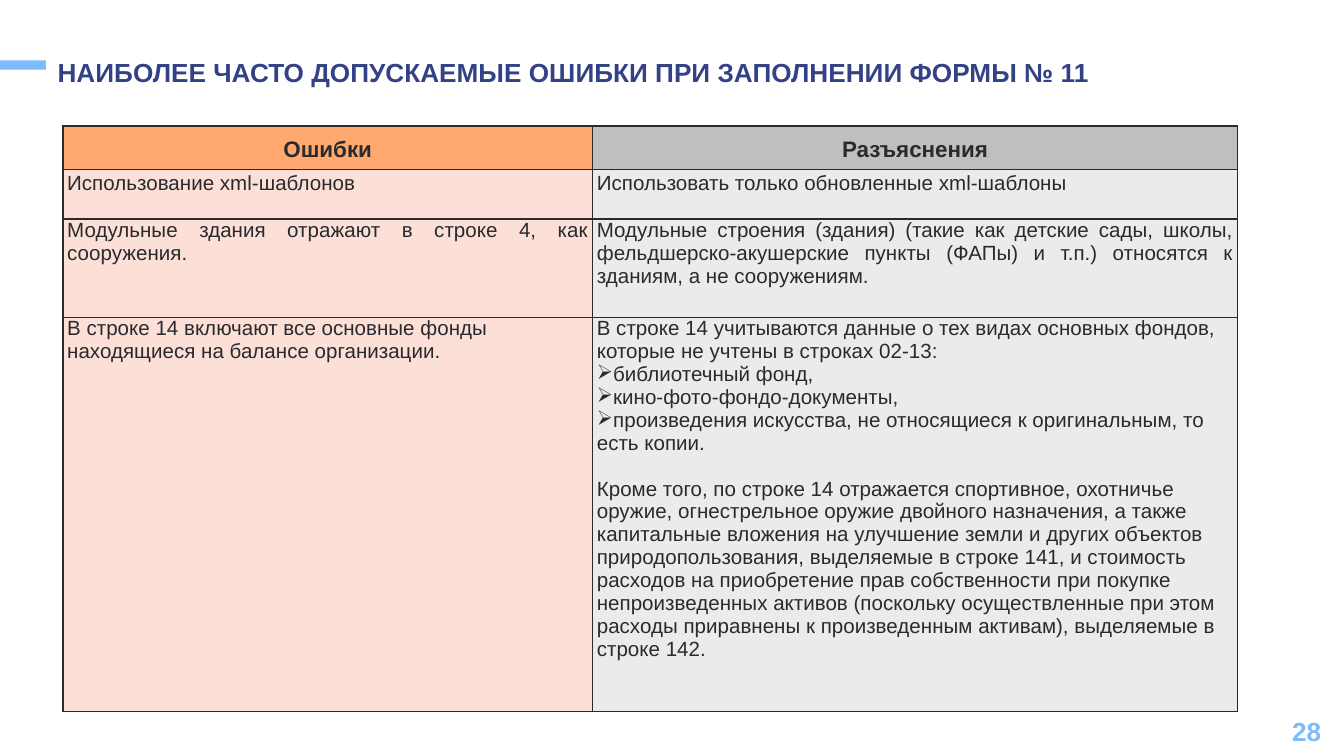
from dataclasses import dataclass

from lxml import etree
from pptx import Presentation
from pptx.dml.color import RGBColor
from pptx.enum.shapes import MSO_SHAPE
from pptx.enum.text import MSO_ANCHOR, PP_ALIGN
from pptx.oxml.ns import qn
from pptx.util import Cm, Pt

RECTANGLE = MSO_SHAPE.RECTANGLE
TOP, MIDDLE = MSO_ANCHOR.TOP, MSO_ANCHOR.MIDDLE
LEFT, CENTER, RIGHT, JUSTIFY = PP_ALIGN.LEFT, PP_ALIGN.CENTER, PP_ALIGN.RIGHT, PP_ALIGN.JUSTIFY


@dataclass(frozen=True)
class Theme:
    font: str = "Arial"
    accent: str = "7DBBFC"
    title: str = "334286"
    ink: str = "282A2E"
    header_fills: tuple = ("FFA970", "BFBFBF")
    body_fills: tuple = ("FCDFD7", "EBEBEB")
    title_size: float = 14
    header_size: float = 12
    body_size: float = 11
    border_width: float = 0.75


@dataclass(frozen=True)
class Paragraph:
    text: str
    bullet: str = ""
    space_before: float = 0


class SlideBuilder:
    def __init__(self, slide, theme):
        self.slide = slide
        self.theme = theme

    def style(self, paragraph, size, color, bold=False, align=LEFT):
        paragraph.alignment = align
        font = paragraph.font
        font.name, font.size, font.bold = self.theme.font, Pt(size), bold
        font.color.rgb = RGBColor.from_string(color)

    def bar(self, left, top, width, height):
        shape = self.slide.shapes.add_shape(RECTANGLE, Cm(left), Cm(top), Cm(width), Cm(height))
        shape.shadow.inherit = False
        shape.fill.solid()
        shape.fill.fore_color.rgb = RGBColor.from_string(self.theme.accent)
        shape.line.fill.background()

    def label(self, text, left, top, width, height, color, align=LEFT, margin=0):
        shape = self.slide.shapes.add_textbox(Cm(left), Cm(top), Cm(width), Cm(height))
        frame = shape.text_frame
        frame.word_wrap = True
        frame.vertical_anchor = MIDDLE
        frame.margin_left = frame.margin_right = Cm(margin)
        frame.margin_top = frame.margin_bottom = Cm(0.1)
        paragraph = frame.paragraphs[0]
        paragraph.text = text
        self.style(paragraph, self.theme.title_size, color, True, align)

    def border(self, cell):
        properties = cell._tc.get_or_add_tcPr()
        for side in ("a:lnL", "a:lnR", "a:lnT", "a:lnB"):
            line = etree.SubElement(properties, qn(side), w=str(Pt(self.theme.border_width)))
            fill = etree.SubElement(line, qn("a:solidFill"))
            etree.SubElement(fill, qn("a:srgbClr"), val=self.theme.ink)

    def cell(self, cell, paragraphs, fill, header=False, align=LEFT, margin_top=0):
        self.border(cell)
        cell.fill.solid()
        cell.fill.fore_color.rgb = RGBColor.from_string(fill)
        cell.margin_left = cell.margin_right = Cm(0.08)
        cell.margin_top, cell.margin_bottom = Cm(margin_top), 0
        cell.vertical_anchor = MIDDLE if header else TOP
        frame = cell.text_frame
        for index, content in enumerate(paragraphs):
            paragraph = frame.add_paragraph() if index else frame.paragraphs[0]
            paragraph.text = content.text
            if content.bullet:
                properties = paragraph._p.get_or_add_pPr()
                properties.set("marL", "0")
                properties.set("indent", "0")
                etree.SubElement(properties, qn("a:buChar"), char=content.bullet)
            if content.space_before:
                paragraph.space_before = Pt(content.space_before)
            if header:
                paragraph.line_spacing = 1.15
            size = self.theme.header_size if header else self.theme.body_size
            self.style(paragraph, size, self.theme.ink, header, align)

    def table(self, left, top, widths, heights, headers, rows):
        shape = self.slide.shapes.add_table(
            len(heights), len(widths), Cm(left), Cm(top), Cm(sum(widths)), Cm(sum(heights)))
        table = shape.table
        table.first_row = table.horz_banding = False
        for column, width in zip(table.columns, widths):
            column.width = Cm(width)
        for row, height in zip(table.rows, heights):
            row.height = Cm(height)
        for column, (text, fill) in enumerate(zip(headers, self.theme.header_fills)):
            self.cell(table.cell(0, column), [Paragraph(text)], fill, True, CENTER)
        for row, (align, margin_top, cells) in enumerate(rows, 1):
            for column, (paragraphs, fill) in enumerate(zip(cells, self.theme.body_fills)):
                self.cell(table.cell(row, column), paragraphs, fill, False, align, margin_top)


HEADERS = ("Ошибки", "Разъяснения")
ROWS = (
    (LEFT, 0.04, (
        [Paragraph("Использование xml-шаблонов")],
        [Paragraph("Использовать только обновленные xml-шаблоны")],
    )),
    (JUSTIFY, 0, (
        [Paragraph("Модульные здания отражают в строке 4, как сооружения.")],
        [Paragraph("Модульные строения (здания) (такие как детские сады, школы, "
                   "фельдшерско-акушерские пункты (ФАПы) и т.п.) относятся к зданиям, "
                   "а не сооружениям.")],
    )),
    (LEFT, 0, (
        [Paragraph("В строке 14 включают все основные фонды находящиеся на балансе организации.")],
        [
            Paragraph("В строке 14 учитываются данные о тех видах основных фондов, "
                      "которые не учтены в строках 02-13:"),
            Paragraph("библиотечный фонд,", "➢"),
            Paragraph("кино-фото-фондо-документы,", "➢"),
            Paragraph("произведения искусства, не относящиеся к оригинальным, то есть копии.", "➢"),
            Paragraph("Кроме того, по строке 14 отражается спортивное, охотничье оружие, "
                      "огнестрельное оружие двойного назначения, а также капитальные вложения "
                      "на улучшение земли и других объектов природопользования, выделяемые в "
                      "строке 141, и стоимость расходов на приобретение прав собственности при "
                      "покупке непроизведенных активов (поскольку осуществленные при этом "
                      "расходы приравнены к произведенным активам), выделяемые в строке 142.",
                      space_before=12.3),
        ],
    )),
)


def main():
    presentation = Presentation()
    presentation.slide_width, presentation.slide_height = Cm(25.4), Cm(14.29)
    theme = Theme()
    builder = SlideBuilder(presentation.slides.add_slide(presentation.slide_layouts[6]), theme)
    builder.bar(0, 1.14, 0.87, 0.18)
    builder.label("28", 19.43, 13.44, 5.72, 0.76, theme.accent, RIGHT, 0.18)
    builder.label("НАИБОЛЕЕ ЧАСТО ДОПУСКАЕМЫЕ ОШИБКИ ПРИ ЗАПОЛНЕНИИ ФОРМЫ № 11",
                  1.09, 0.94, 19.81, 0.86, theme.title)
    builder.table(1.19, 2.38, (10.01, 12.19), (0.83, 0.93, 1.86, 7.45), HEADERS, ROWS)
    presentation.save("out.pptx")


if __name__ == "__main__":
    main()
